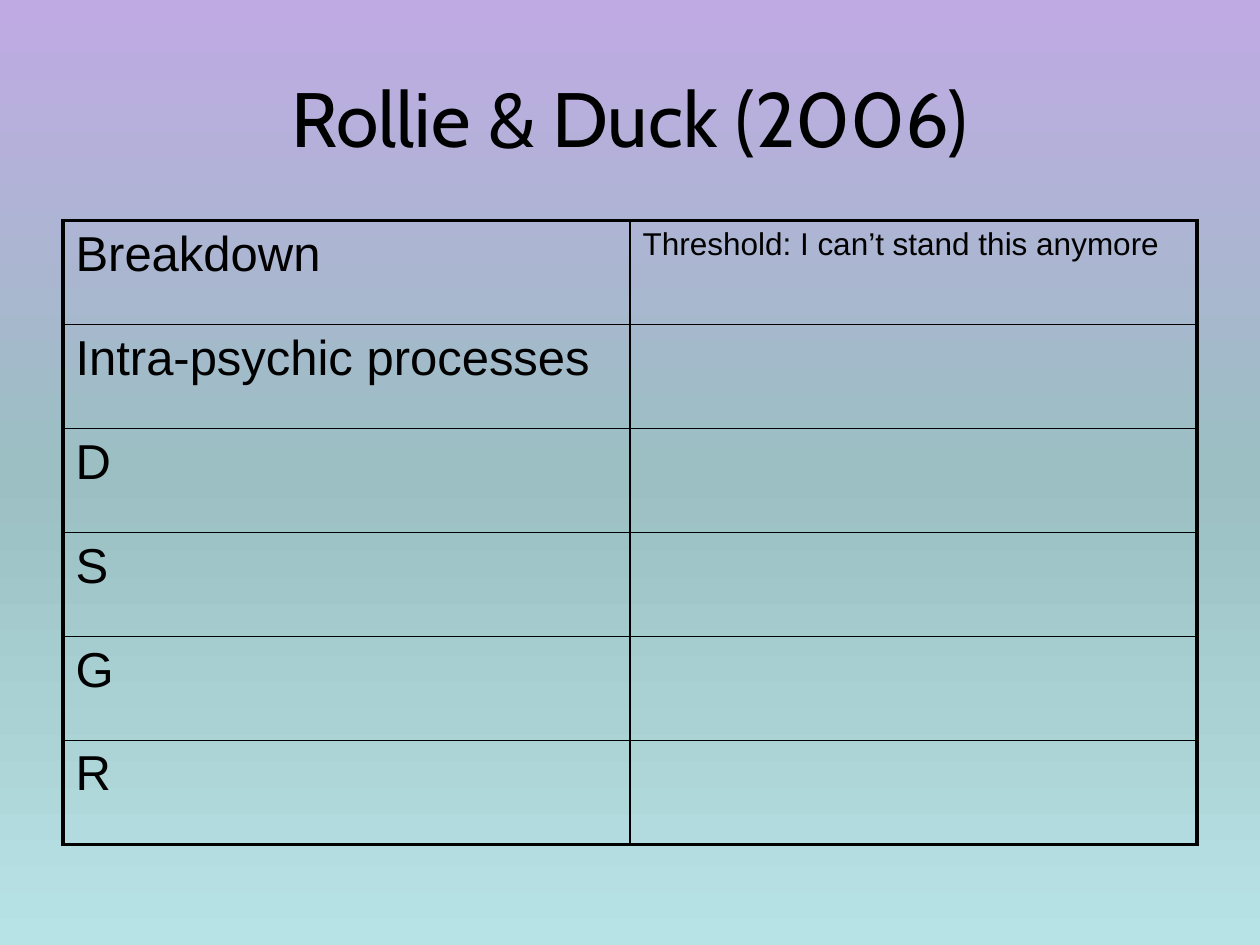
from copy import deepcopy

from lxml.etree import SubElement
from pptx import Presentation
from pptx.dml.color import RGBColor
from pptx.enum.text import MSO_ANCHOR as Anchor, PP_ALIGN as Align
from pptx.oxml.ns import qn
from pptx.util import Cm, Pt

STAGES = [
    ("Breakdown", "Threshold: I can’t stand this anymore"),
    ("Intra-psychic processes", ""),
    ("D", ""),
    ("S", ""),
    ("G", ""),
    ("R", ""),
]


def color(hex_text):
    return RGBColor.from_string(hex_text)


def write(frame, text, *, font, size, ink, align=Align.LEFT, before=None):
    """Put text in the first paragraph; before is a percentage of the line."""
    paragraph = frame.paragraphs[0]
    paragraph.alignment = align
    if before:
        spacing = SubElement(paragraph._p.get_or_add_pPr(), qn("a:spcBef"))
        SubElement(spacing, qn("a:spcPct"), val=str(before * 1000))
    if text:
        run = paragraph.add_run()
        run.text = text
        run.font.name = font
        run.font.size = Pt(size)
        run.font.color.rgb = color(ink)


class Deck:
    INK = "000000"
    TITLE_FONT = "Cabin"
    BODY_FONT = "Arial"
    BACKGROUND = ["BFAAE4", "9BBFC2", "B8E3E6"]
    OUTER, INNER = 2.25, 1
    LEFT, WIDTH = Cm(1.27), Cm(22.86)

    def __init__(self):
        self.show = Presentation()
        self.show.slide_width, self.show.slide_height = Cm(25.4), Cm(19.05)
        self.slide = self.show.slides.add_slide(self.show.slide_layouts[5])

    def background(self):
        fill = self.slide.background.fill
        fill.gradient()
        fill.gradient_angle = 270
        stops = self.slide.element.find(".//" + qn("a:gsLst"))
        stops.insert(1, deepcopy(stops[0]))
        last = len(self.BACKGROUND) - 1
        for index, (stop, tint) in enumerate(zip(fill.gradient_stops, self.BACKGROUND)):
            stop.position = index / last
            stop.color.rgb = color(tint)

    def title(self, text):
        title = self.slide.shapes.title
        title.left, title.top = self.LEFT, Cm(0.76)
        title.width, title.height = self.WIDTH, Cm(3.18)
        title.text_frame.vertical_anchor = Anchor.MIDDLE
        write(title.text_frame, text, font=self.TITLE_FONT, size=44,
              ink=self.INK, align=Align.CENTER)

    def border(self, cell, side, width):
        line = SubElement(cell._tc.get_or_add_tcPr(), qn("a:ln" + side), w=str(Pt(width)))
        fill = SubElement(line, qn("a:solidFill"))
        SubElement(fill, qn("a:srgbClr"), val=self.INK)

    def table(self, rows, sizes):
        """Draw a grid with a heavy frame; sizes holds one text size a column."""
        last_row, last_column = len(rows) - 1, len(sizes) - 1
        table = self.slide.shapes.add_table(
            len(rows), len(sizes), self.LEFT, Cm(4.45), self.WIDTH, Cm(12.57)).table
        table.first_row = table.horz_banding = False
        for r, row in enumerate(rows):
            for c, (text, size) in enumerate(zip(row, sizes)):
                cell = table.cell(r, c)
                on_frame = {"L": c == 0, "R": c == last_column,
                            "T": r == 0, "B": r == last_row}
                for side, outer in on_frame.items():
                    self.border(cell, side, self.OUTER if outer else self.INNER)
                cell.fill.background()
                write(cell.text_frame, text, font=self.BODY_FONT, size=size,
                      ink=self.INK, before=20)

    def save(self):
        self.show.save("out.pptx")


def main():
    deck = Deck()
    deck.background()
    deck.title("Rollie & Duck (2006)")
    deck.table(STAGES, sizes=(28, 18))
    deck.save()


if __name__ == "__main__":
    main()
